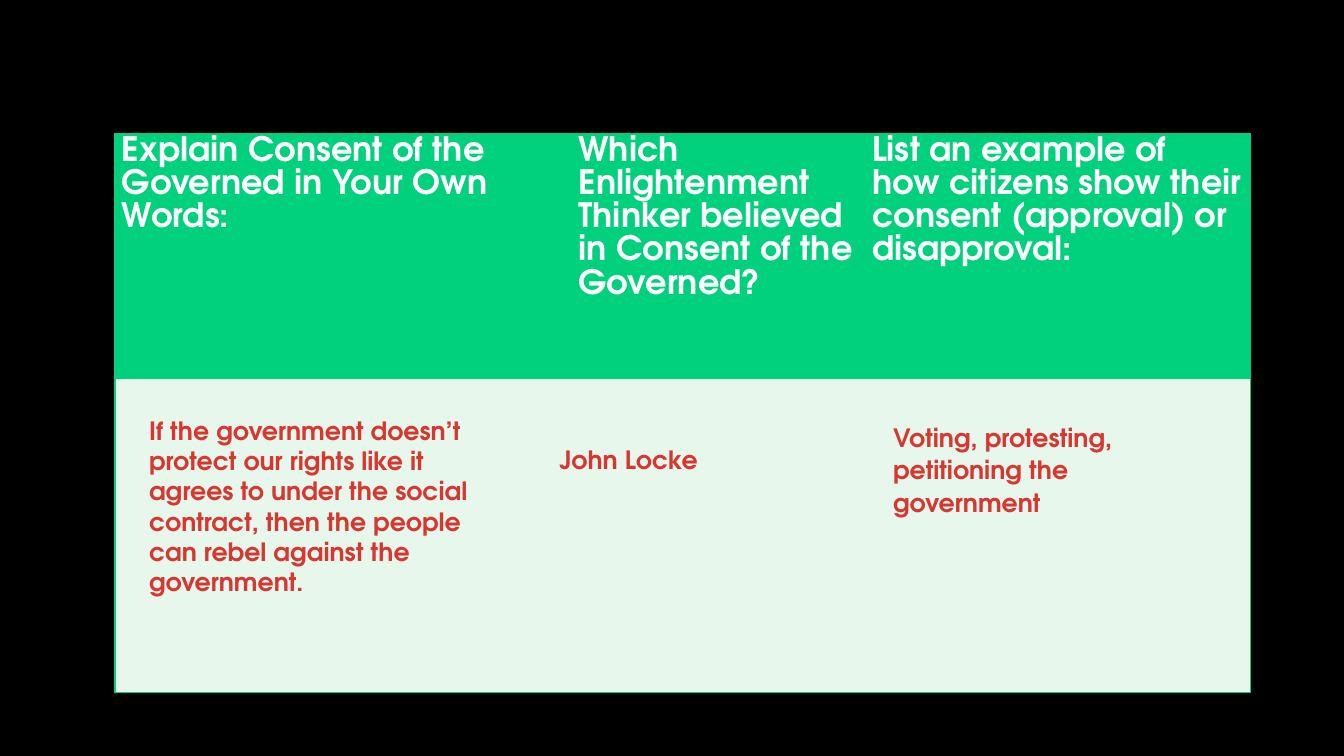
from pptx import Presentation
from pptx.dml.color import RGBColor
from pptx.oxml import parse_xml
from pptx.oxml.ns import nsdecls
from pptx.util import Inches, Pt

BLACK = RGBColor(0x00, 0x00, 0x00)
WHITE = RGBColor(0xFF, 0xFF, 0xFF)
GREEN = RGBColor(0x01, 0xD1, 0x7D)
MINT = RGBColor(0xE7, 0xF7, 0xEC)
RED = RGBColor(0xD6, 0x37, 0x31)
FONT = "TeX Gyre Adventor"

QUESTIONS = [
    "Explain Consent of the Governed in Your Own Words:",
    "Which Enlightenment Thinker believed in Consent of the Governed?",
    "List an example of how citizens show their consent (approval) or disapproval:",
]
# left, top, width, height, line spacing, text
ANSWERS = [
    (1.38, 4.07, 3.81, 2.22, 1.0,
     "If the government doesn’t protect our rights like it agrees to under "
     "the social contract, then the people can rebel against the government."),
    (5.45, 4.34, 2.87, 0.73, 1.07, "John Locke"),
    (8.76, 4.12, 2.87, 1.7, 1.07, "Voting, protesting, petitioning the government"),
]
COLUMN_WIDTHS = [4.53, 2.91, 3.82]
ROW_HEIGHTS = [2.42, 3.12]


def style_text(para, size, color, line_spacing):
    para.line_spacing = line_spacing
    para.font.name = FONT
    para.font.size = Pt(size)
    para.font.bold = True
    para.font.color.rgb = color


def set_borders(cell, visible_sides):
    """Draw green lines on the given sides (L, R, T, B) and none on the others."""
    properties = cell._tc.get_or_add_tcPr()
    for side in "LRTB":
        if side in visible_sides:
            paint = f'<a:solidFill><a:srgbClr val="{GREEN}"/></a:solidFill>'
        else:
            paint = "<a:noFill/>"
        properties.append(parse_xml(
            f'<a:ln{side} {nsdecls("a")} w="{Pt(1)}">{paint}</a:ln{side}>'))


deck = Presentation()
deck.slide_width = Inches(13.33)
deck.slide_height = Inches(7.5)
page = deck.slides.add_slide(deck.slide_layouts[6])
page.background.fill.solid()
page.background.fill.fore_color.rgb = BLACK

table = page.shapes.add_table(
    len(ROW_HEIGHTS), len(COLUMN_WIDTHS), Inches(1.14), Inches(1.33),
    Inches(sum(COLUMN_WIDTHS)), Inches(sum(ROW_HEIGHTS))).table
for column, width in zip(table.columns, COLUMN_WIDTHS):
    column.width = Inches(width)
for row, height in zip(table.rows, ROW_HEIGHTS):
    row.height = Inches(height)

last_column = len(COLUMN_WIDTHS) - 1
for row_index, fill_color in enumerate([GREEN, MINT]):
    for column_index in range(len(COLUMN_WIDTHS)):
        cell = table.cell(row_index, column_index)
        outer_side = {0: "L", last_column: "R"}.get(column_index, "")
        set_borders(cell, "TB" + outer_side)
        cell.fill.solid()
        cell.fill.fore_color.rgb = fill_color
        cell.margin_left = cell.margin_right = Inches(0.07)
        cell.margin_top = cell.margin_bottom = 0

for column_index, question in enumerate(QUESTIONS):
    cell = table.cell(0, column_index)
    cell.text = question
    style_text(cell.text_frame.paragraphs[0], 24, WHITE, 1.07)

for left, top, width, height, line_spacing, answer in ANSWERS:
    box = page.shapes.add_textbox(Inches(left), Inches(top), Inches(width), Inches(height))
    box.text_frame.word_wrap = True
    box.text_frame.text = answer
    style_text(box.text_frame.paragraphs[0], 18, RED, line_spacing)

deck.save("out.pptx")
